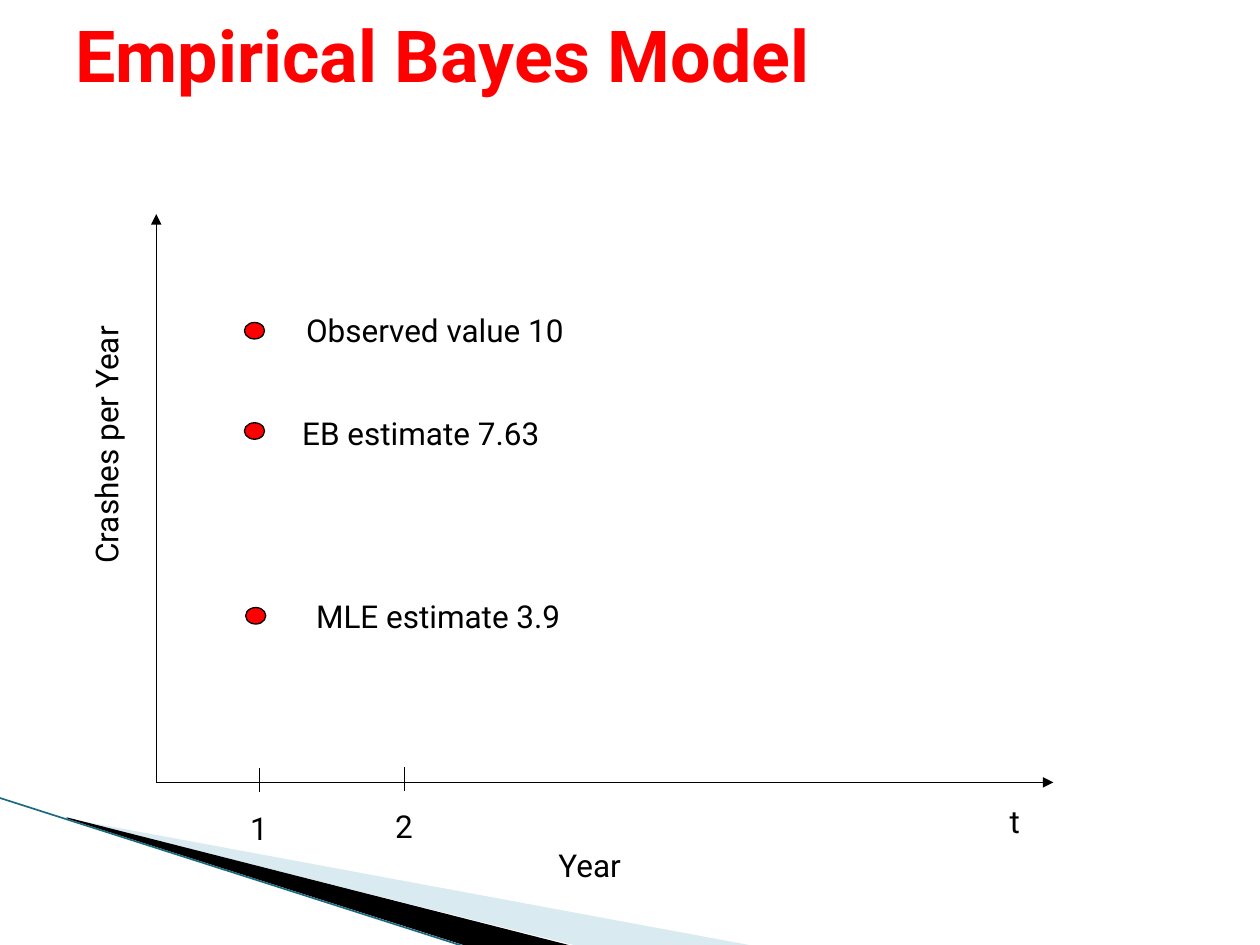
import pptx
import pptx.dml.color
import pptx.enum.shapes
import pptx.enum.text
import pptx.oxml
import pptx.oxml.ns
import pptx.util

Pt = pptx.util.Pt
RGBColor = pptx.dml.color.RGBColor
ALIGN = pptx.enum.text.PP_ALIGN
ANCHOR = pptx.enum.text.MSO_ANCHOR

RED = RGBColor(0xFF, 0x00, 0x00)
BLACK = RGBColor(0x00, 0x00, 0x00)
PALE_BLUE = RGBColor(0xA0, 0xCB, 0xDC)
TEAL = RGBColor(0x1B, 0x6B, 0x80)
FONT = "Roboto"
NAMESPACE = pptx.oxml.ns.nsdecls("a")

presentation = pptx.Presentation()
presentation.slide_width = Pt(720)
presentation.slide_height = Pt(540)
slide = presentation.slides.add_slide(presentation.slide_layouts[6])


def add_text(text, left, top, width, height=28.8, size=18, color=BLACK, align=ALIGN.LEFT):
    box = slide.shapes.add_textbox(Pt(left), Pt(top), Pt(width), Pt(height))
    box.text_frame.word_wrap = True
    box.text_frame.vertical_anchor = ANCHOR.TOP
    paragraph = box.text_frame.paragraphs[0]
    paragraph.alignment = align
    run = paragraph.add_run()
    run.text = text
    run.font.name = FONT
    run.font.size = Pt(size)
    run.font.color.rgb = color
    return box


def add_line(start_x, start_y, end_x, end_y, color=BLACK, width=0.75, arrow=False):
    line = slide.shapes.add_connector(
        pptx.enum.shapes.MSO_CONNECTOR.STRAIGHT, Pt(start_x), Pt(start_y), Pt(end_x), Pt(end_y))
    line.line.color.rgb = color
    line.line.width = Pt(width)
    if arrow:
        line.line._get_or_add_ln().append(
            pptx.oxml.parse_xml(f'<a:tailEnd {NAMESPACE} type="triangle"/>'))
    line._element.spPr.append(pptx.oxml.parse_xml(f"<a:effectLst {NAMESPACE}/>"))


wedges = [
    (PALE_BLUE, 40, [(39.6, 468.5), (428.4, 540.5), (328.3, 540.5), (39.6, 468)]),
    (BLACK, 100, [(38.2, 467.3), (329, 540.7), (267.8, 541.4), (38.9, 468)]),
]
for color, opacity, points in wedges:
    builder = slide.shapes.build_freeform(*points[0], scale=Pt(1))
    builder.add_line_segments(points[1:], close=True)
    wedge = builder.convert_to_shape()
    wedge.shadow.inherit = False
    wedge.fill.solid()
    wedge.fill.fore_color.rgb = color
    wedge.line.fill.background()
    if opacity < 100:
        color_element = wedge._element.spPr.find(".//" + pptx.oxml.ns.qn("a:srgbClr"))
        color_element.append(
            pptx.oxml.parse_xml(f'<a:alpha {NAMESPACE} val="{opacity * 1000}"/>'))
add_line(-0.7, 455.8, 267.1, 541.4, TEAL, 0.95)

title = add_text("Empirical Bayes Model", 36, 0, 648, 61.9, 41, RED)
title.text_frame.vertical_anchor = ANCHOR.MIDDLE
title.text_frame.paragraphs[0].runs[0].font.bold = True

origin_x, origin_y = 89.3, 447.1
add_line(origin_x, origin_y, origin_x, 122.4, arrow=True)
add_line(origin_x, origin_y, 601.9, origin_y, arrow=True)

vertical_label = add_text("Crashes per Year", -25.2, 229, 171.4)
vertical_label.rotation = 270
add_text("Year", 288, 480.2, 97.9, align=ALIGN.CENTER)
add_text("t", 563, 455, 33.8, align=ALIGN.CENTER)

for label, tick_x, tick_top in [("1", 148.4, 439.1), ("2", 231.2, 438.4)]:
    add_line(tick_x, tick_top, tick_x, tick_top + 13.7)
    add_text(label, tick_x - 17.3, tick_top + 19.5, 33.8, align=ALIGN.CENTER)

estimates = [
    ("Observed value 10", 139.7, 184.3, 167.8, 174.2),
    ("EB estimate 7.63", 139.7, 241.6, 165.6, 233.3),
    ("MLE estimate 3.9", 140.4, 347.2, 173.5, 337.7),
]
for label, dot_left, dot_top, label_left, label_top in estimates:
    dot = slide.shapes.add_shape(
        pptx.enum.shapes.MSO_SHAPE.OVAL, Pt(dot_left), Pt(dot_top), Pt(11.5), Pt(9.4))
    dot.shadow.inherit = False
    dot.fill.solid()
    dot.fill.fore_color.rgb = RED
    dot.line.color.rgb = BLACK
    dot.line.width = Pt(0.75)
    add_text(label, label_left, label_top, 208.1)

presentation.save("out.pptx")
